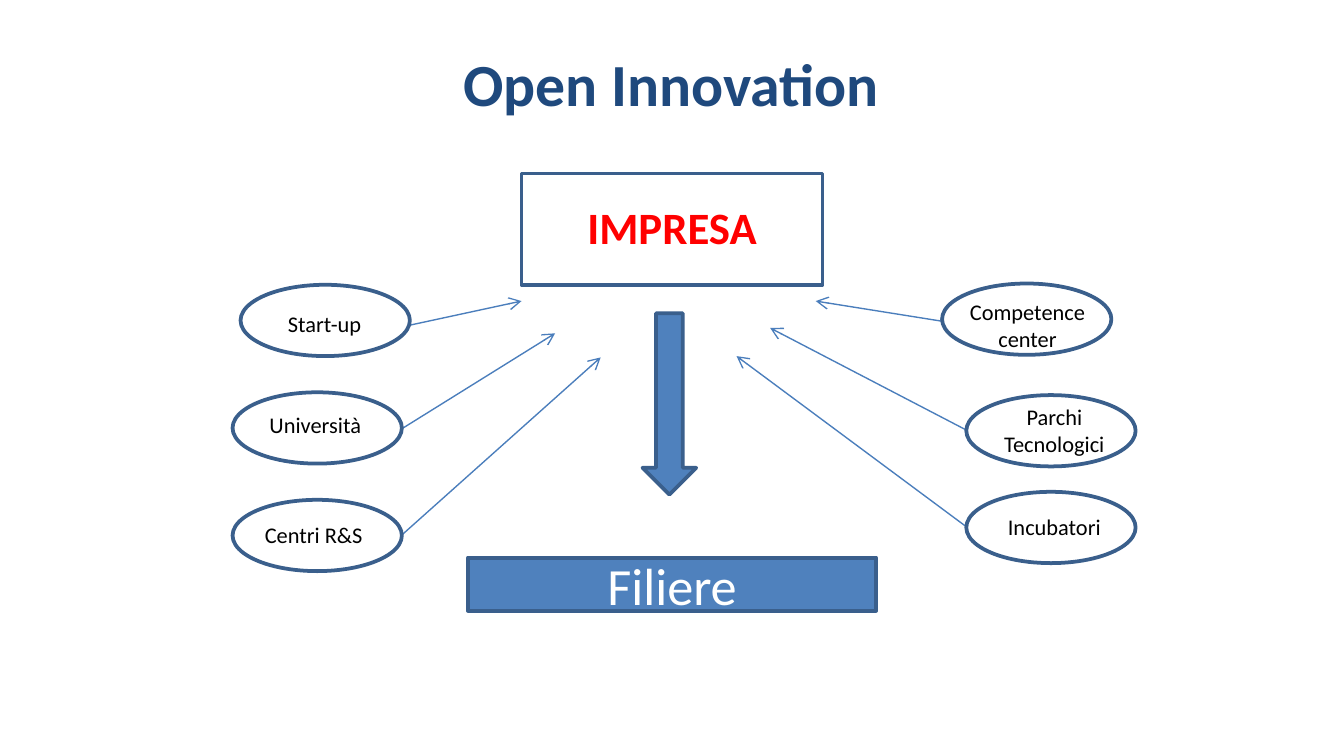
from lxml.etree import SubElement as Sub
from pptx import Presentation
from pptx.dml.color import RGBColor as RGB
from pptx.enum.shapes import MSO_CONNECTOR as Link, MSO_SHAPE as Kind
from pptx.enum.text import MSO_ANCHOR as Anchor, PP_ALIGN as Align
from pptx.oxml.ns import qn
from pptx.util import Pt

HUES = {
    "title": "1F497D",
    "firm": "FF0000",
    "text": "000000",
    "light": "FFFFFF",
    "fill": "4F81BD",
    "edge": "3A5F8C",
    "arrow": "4B7EBC",
}
OVAL_W, OVAL_H = 90.7, 38.2

# name, oval (left, top), label (left, top), arrow start y, arrow tip
LEFT = [
    ("Start-up", (128.9, 152.6), (136.8, 162.7), 174.2, (279.4, 161.3)),
    ("Università", (124.6, 210.2), (131.8, 216.7), 229.7, (297.4, 178.6)),
    ("Centri R&S", (124.6, 267.8), (131, 275.8), 286.6, (321.8, 191.5)),
]
RIGHT = [
    ("Competence center", (504.7, 151.9), (500.4, 156.2), 172.1, (437, 161.3)),
    ("Parchi Tecnologici", (517.7, 211.7), (514.8, 212.4), 230.4, (412.6, 175.7)),
    ("Incubatori", (517.7, 263.5), (514.8, 271.4), 282.2, (394.6, 190.8)),
]


class Board:
    def __init__(self, slide, font="Calibri"):
        self.slide = slide
        self.font = font

    def put(self, frame, words, size, hue, bold=False):
        """Set styled, centred text in a text frame."""
        frame.word_wrap = True
        para = frame.paragraphs[0]
        para.text = words
        para.alignment = Align.CENTER
        para.font.name = self.font
        para.font.size = Pt(size)
        para.font.bold = bold
        para.font.color.rgb = RGB.from_string(HUES[hue])

    def label(self, words, left, top, width, height, size=12, hue="text", bold=False):
        box = self.slide.shapes.add_textbox(Pt(left), Pt(top), Pt(width), Pt(height))
        self.put(box.text_frame, words, size, hue, bold)

    def shape(self, kind, left, top, width, height, fill=None):
        item = self.slide.shapes.add_shape(
            kind, Pt(left), Pt(top), Pt(width), Pt(height))
        item.shadow.inherit = False
        if fill:
            item.fill.solid()
            item.fill.fore_color.rgb = RGB.from_string(HUES[fill])
        else:
            item.fill.background()
        item.line.color.rgb = RGB.from_string(HUES["edge"])
        item.line.width = Pt(2)
        return item

    def banner(self, words, left, top, width, height, size):
        item = self.shape(Kind.RECTANGLE, left, top, width, height, "fill")
        item.text_frame.vertical_anchor = Anchor.MIDDLE
        self.put(item.text_frame, words, size, "light")

    def arrow(self, start, tip):
        link = self.slide.shapes.add_connector(
            Link.STRAIGHT, *(Pt(v) for v in (*start, *tip)))
        link.line.color.rgb = RGB.from_string(HUES["arrow"])
        link.line.width = Pt(0.75)
        props = link._element.spPr
        Sub(props.find(qn("a:ln")), qn("a:tailEnd"), type="arrow")
        Sub(props, qn("a:effectLst"))

    def partner(self, name, oval, spot, width, start, tip):
        """Draw a named oval with its arrow towards the firm."""
        self.label(name, *spot, width, 22)
        self.arrow(start, tip)
        self.shape(Kind.OVAL, *oval, OVAL_W, OVAL_H)


def main():
    deck = Presentation()
    deck.slide_width, deck.slide_height = Pt(720), Pt(405)
    board = Board(deck.slides.add_slide(deck.slide_layouts[6]))

    board.label("Open Innovation", 97.2, 21.6, 525, 50.4, 32, "title", True)
    board.shape(Kind.RECTANGLE, 279.4, 93, 161.3, 59.7)
    board.label("IMPRESA", 279.4, 103.7, 161.3, 36, 24, "firm", True)
    board.shape(Kind.DOWN_ARROW, 344.2, 167.8, 28.8, 97.2, "fill")
    board.banner("Filiere", 250.6, 298.8, 218.9, 28.4, 28)

    for name, oval, spot, y, tip in LEFT:
        board.partner(name, oval, spot, 74.2, (oval[0] + OVAL_W, y), tip)
    for name, oval, spot, y, tip in RIGHT:
        board.partner(name, oval, spot, 100.1, (oval[0], y), tip)

    deck.save("out.pptx")


if __name__ == "__main__":
    main()
